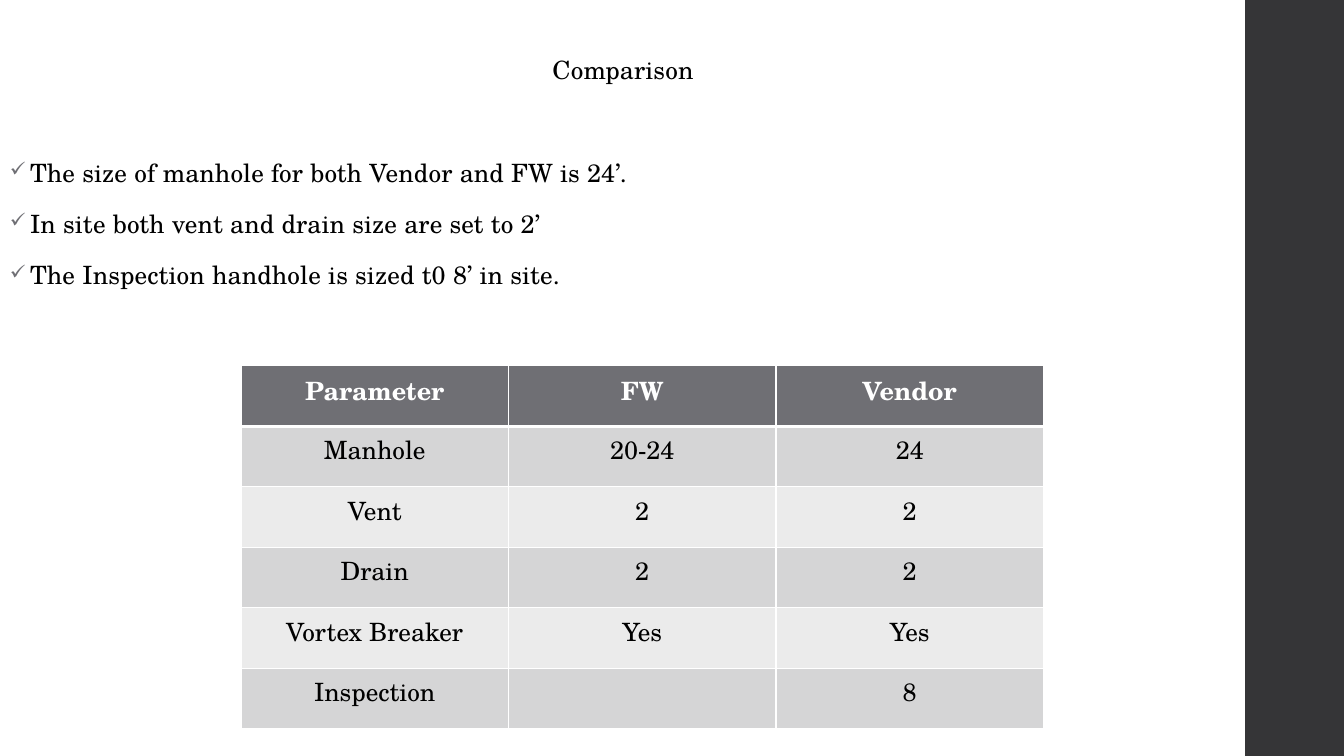
from lxml import etree
from pptx import Presentation
from pptx.dml.color import RGBColor
from pptx.enum.shapes import MSO_SHAPE
from pptx.enum.text import PP_ALIGN
from pptx.oxml.ns import qn
from pptx.util import Inches, Pt

RECTANGLE = MSO_SHAPE.RECTANGLE
CENTER = PP_ALIGN.CENTER
LEFT = PP_ALIGN.LEFT

FONT = "TeX Gyre Schola"
BLACK = RGBColor(0x00, 0x00, 0x00)
WHITE = RGBColor(0xFF, 0xFF, 0xFF)
SIDEBAR_GRAY = RGBColor(0x35, 0x35, 0x37)
HEADER_GRAY = RGBColor(0x6F, 0x6F, 0x74)
DARK_BAND = RGBColor(0xD5, 0xD5, 0xD6)
LIGHT_BAND = RGBColor(0xEB, 0xEB, 0xEB)


def write_text(paragraph, text, color=BLACK, bold=False, align=CENTER, spacing=None):
    paragraph.alignment = align
    run = paragraph.add_run()
    run.text = text
    run.font.name = FONT
    run.font.size = Pt(18)
    run.font.bold = bold
    run.font.color.rgb = color
    if spacing is not None:
        run.font._element.set("spc", str(spacing))


def add_border(cell, side, width):
    line = etree.SubElement(cell._tc.get_or_add_tcPr(), qn(f"a:ln{side}"), w=str(Pt(width)))
    fill = etree.SubElement(line, qn("a:solidFill"))
    etree.SubElement(fill, qn("a:srgbClr"), val=str(WHITE))


presentation = Presentation()
presentation.slide_width = Inches(13.33)
presentation.slide_height = Inches(7.5)
slide = presentation.slides.add_slide(presentation.slide_layouts[6])

# Sidebar
sidebar = slide.shapes.add_shape(RECTANGLE, Inches(12.35), 0, Inches(1), Inches(7.5))
sidebar.shadow.inherit = False
sidebar.fill.solid()
sidebar.fill.fore_color.rgb = SIDEBAR_GRAY
sidebar.line.fill.background()

# Title and remarks
body = slide.shapes.add_textbox(0, 0, Inches(12.36), Inches(7.5))
text_frame = body.text_frame
text_frame.word_wrap = True
text_frame.margin_top = Inches(0.56)
title = text_frame.paragraphs[0]
title.line_spacing = 0.95
title.space_after = Pt(39)
write_text(title, "Comparison", spacing=10)

remarks = [
    "The size of manhole for both Vendor and FW is 24’.",
    "In site both vent and drain size are set to 2’",
    "The Inspection handhole is sized t0 8’ in site.",
]
for remark in remarks:
    paragraph = text_frame.add_paragraph()
    paragraph.line_spacing = 0.95
    paragraph.space_before = Pt(14)
    paragraph.space_after = Pt(2)
    write_text(paragraph, remark, align=LEFT, spacing=10)
    properties = paragraph._p.get_or_add_pPr()
    properties.set("marL", str(Inches(0.2)))
    properties.set("indent", str(Inches(-0.2)))
    bullet_color = etree.SubElement(properties, qn("a:buClr"))
    etree.SubElement(bullet_color, qn("a:srgbClr"), val=str(HEADER_GRAY))
    etree.SubElement(properties, qn("a:buSzPct"), val="80000")
    etree.SubElement(properties, qn("a:buChar"), char="✓")

# Comparison table
rows = [
    ("Parameter", "FW", "Vendor"),
    ("Manhole", "20-24", "24"),
    ("Vent", "2", "2"),
    ("Drain", "2", "2"),
    ("Vortex Breaker", "Yes", "Yes"),
    ("Inspection", "", "8"),
]
table = slide.shapes.add_table(
    len(rows), 3, Inches(2.39), Inches(3.63), Inches(7.96), Inches(3.6)
).table
for row_index, row in enumerate(rows):
    is_header = row_index == 0
    band = DARK_BAND if row_index % 2 else LIGHT_BAND
    for column_index, text in enumerate(row):
        cell = table.cell(row_index, column_index)
        add_border(cell, "L", 1)
        add_border(cell, "R", 1)
        add_border(cell, "T", 3 if row_index == 1 else 1)
        add_border(cell, "B", 3 if is_header else 1)
        cell.fill.solid()
        cell.fill.fore_color.rgb = HEADER_GRAY if is_header else band
        if text:
            write_text(cell.text_frame.paragraphs[0], text,
                       color=WHITE if is_header else BLACK, bold=is_header)

presentation.save("out.pptx")
